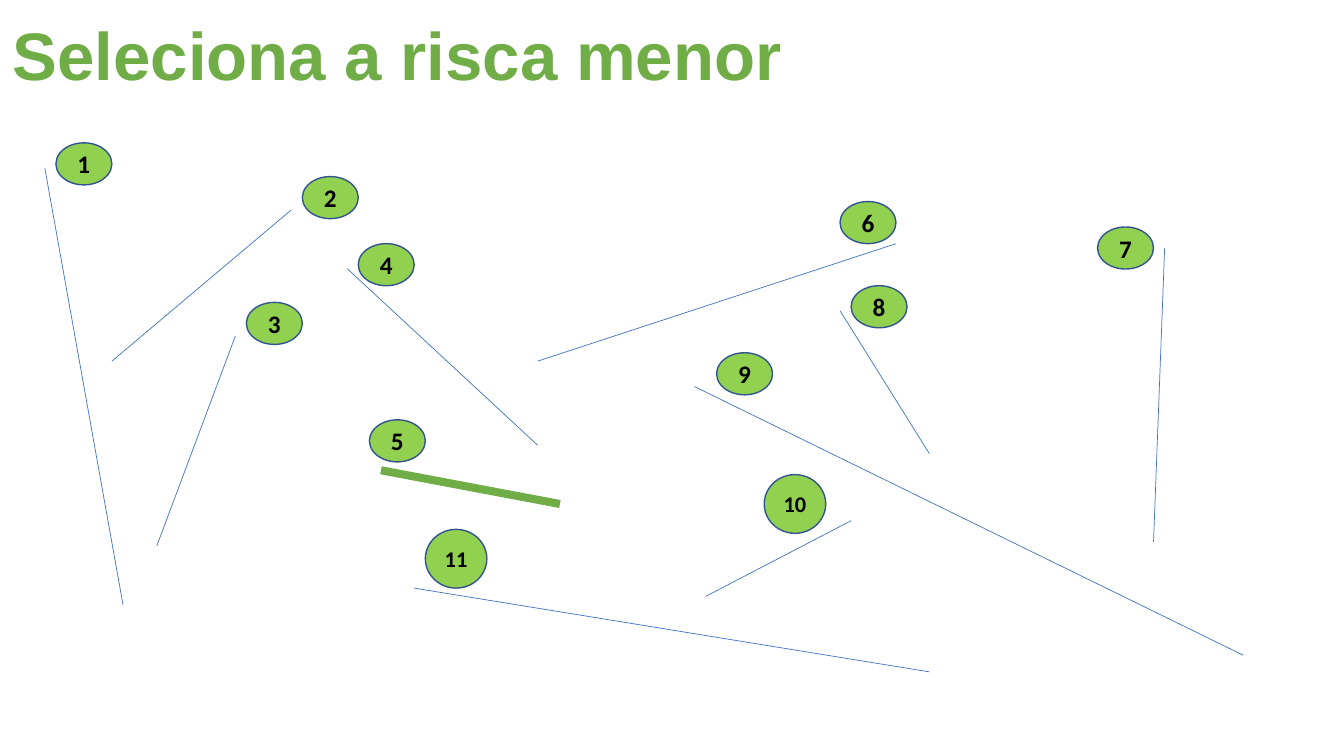
"""Builds the slide asking which of eleven numbered lines is the shortest."""
from lxml.etree import SubElement
from pptx import Presentation
from pptx.dml.color import RGBColor
from pptx.enum.shapes import MSO_CONNECTOR, MSO_SHAPE
from pptx.enum.text import MSO_ANCHOR, MSO_AUTO_SIZE, PP_ALIGN
from pptx.oxml.ns import qn
from pptx.util import Cm, Pt

TITLE = "Seleciona a risca menor"
SHORTEST = 5
COLORS = {"answer": "70AD47", "line": "4472C4", "badge": "92D050",
          "outline": "325491", "number": "000000"}

# number: (line start, line end, badge corner), in cm
LINES = {
    1: ((1.13, 4.23), (3.1, 15.24), (1.41, 3.6)),
    2: ((2.82, 9.1), (7.34, 5.29), (7.62, 4.45)),
    3: ((3.95, 13.76), (5.93, 8.47), (6.21, 7.62)),
    4: ((8.75, 6.77), (13.55, 11.22), (9.03, 6.14)),
    5: ((9.6, 11.85), (14.11, 12.7), (9.31, 10.58)),
    6: ((13.55, 9.1), (22.58, 6.14), (21.17, 5.08)),
    7: ((29.35, 6.25), (29.07, 13.66), (27.66, 5.72)),
    8: ((21.17, 7.83), (23.42, 11.43), (21.45, 7.2)),
    9: ((17.5, 9.74), (31.33, 16.51), (18.06, 8.89)),
    10: ((17.78, 15.03), (21.45, 13.12), (19.26, 11.96)),
    11: ((10.44, 14.82), (23.42, 16.93), (10.72, 13.34)),
}


def rgb(name):
    return RGBColor.from_string(COLORS[name])


def write(sp, text, *, size, font, color, spacing=1.0, wrap=False):
    tf = sp.text_frame
    tf.word_wrap = wrap
    tf.auto_size = MSO_AUTO_SIZE.NONE
    tf.vertical_anchor = MSO_ANCHOR.MIDDLE
    p = tf.paragraphs[0]
    p.alignment = PP_ALIGN.CENTER
    p.line_spacing = spacing
    r = p.add_run()
    r.text = text
    r.font.name = font
    r.font.size = Pt(size)
    r.font.bold = True
    r.font.color.rgb = rgb(color)


def add_line(s, start, end, color, width):
    line = s.shapes.add_connector(MSO_CONNECTOR.STRAIGHT,
                                  *(Cm(v) for v in start + end))
    line.line.color.rgb = rgb(color)
    line.line.width = Pt(width)
    SubElement(line._element.spPr, qn("a:effectLst"))


def add_badge(s, number, corner):
    dims, size = ((1.41, 1.06), 18) if number < 10 else ((1.55, 1.48), 16)
    sp = s.shapes.add_shape(MSO_SHAPE.OVAL, *(Cm(v) for v in corner + dims))
    sp.shadow.inherit = False
    sp.fill.solid()
    sp.fill.fore_color.rgb = rgb("badge")
    sp.line.color.rgb = rgb("outline")
    sp.line.width = Pt(1)
    write(sp, str(number), size=size, font="Calibri", color="number")


def main():
    prs = Presentation()
    prs.slide_width, prs.slide_height = Cm(33.87), Cm(19.05)
    s = prs.slides.add_slide(prs.slide_layouts[5])

    title = s.shapes.title
    title.left, title.top = Cm(0), Cm(0)
    title.width, title.height = Cm(20.04), Cm(2.95)
    write(title, TITLE, size=48, font="Arial", color="answer",
          spacing=0.9, wrap=True)

    for number, (start, end, _) in LINES.items():
        color, width = ("answer", 5.75) if number == SHORTEST else ("line", 0.5)
        add_line(s, start, end, color, width)
    for number, (_, _, corner) in LINES.items():
        add_badge(s, number, corner)

    prs.save("out.pptx")


if __name__ == "__main__":
    main()
